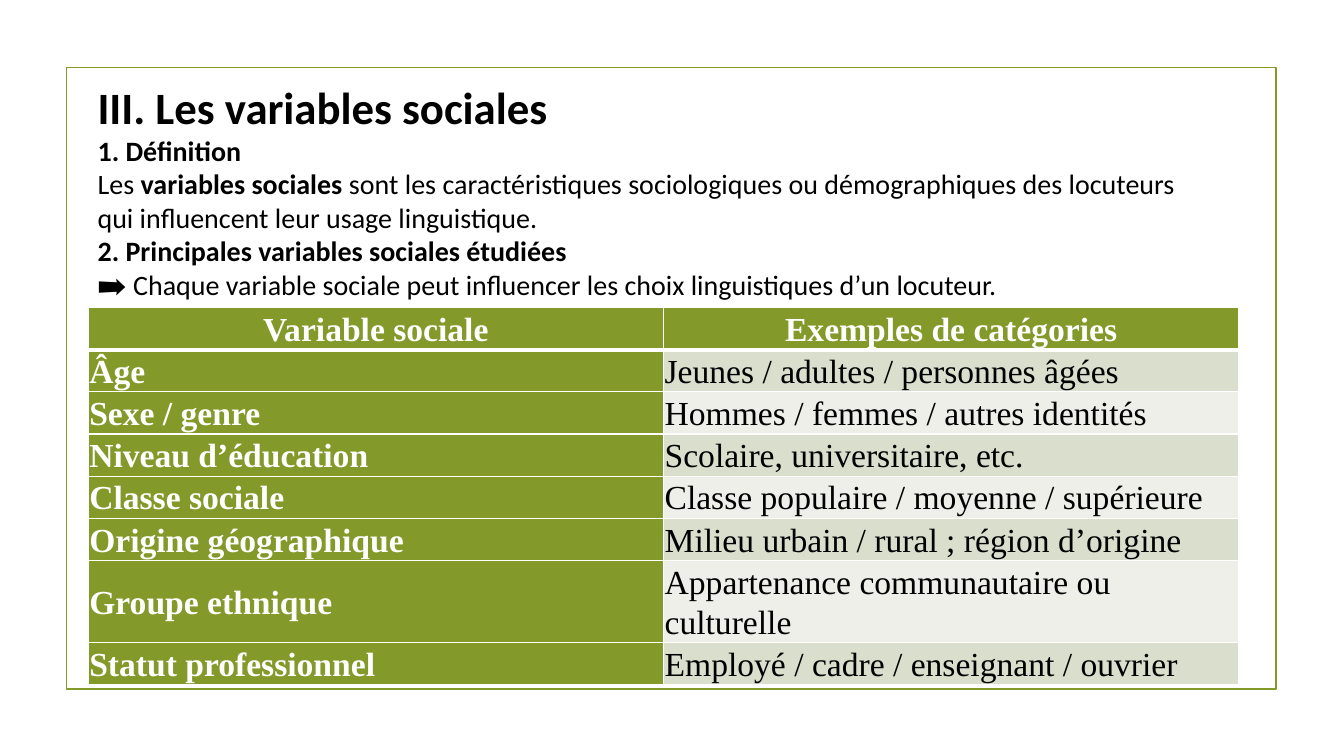
from lxml import etree
from pptx import Presentation
from pptx.dml.color import RGBColor
from pptx.enum.shapes import MSO_SHAPE
from pptx.enum.text import MSO_ANCHOR, PP_ALIGN
from pptx.oxml.ns import qn
from pptx.util import Cm, Pt

RECT = MSO_SHAPE.RECTANGLE
MIDDLE = MSO_ANCHOR.MIDDLE
LEFT, CENTER = PP_ALIGN.LEFT, PP_ALIGN.CENTER

GREEN, WHITE, BLACK = "83992A", "FFFFFF", "000000"
BANDS = ["EDEFE8", "D9DECD"]

# Each paragraph: size, then runs of (text, bold)
INTRO = [
    (32, [("III. Les variables sociales", True)]),
    (20, [("1. Définition", True)]),
    (20, [("Les ", False), ("variables sociales", True),
          (" sont les caractéristiques sociologiques ou démographiques des "
           "locuteurs qui influencent leur usage linguistique.", False)]),
    (20, [("2. Principales variables sociales étudiées", True)]),
    (20, [("➡️ Chaque variable sociale peut influencer les choix "
           "linguistiques d’un locuteur.", False)]),
]
ROWS = [
    ("Variable sociale", "Exemples de catégories"),
    ("Âge", "Jeunes / adultes / personnes âgées"),
    ("Sexe / genre", "Hommes / femmes / autres identités"),
    ("Niveau d’éducation", "Scolaire, universitaire, etc."),
    ("Classe sociale", "Classe populaire / moyenne / supérieure"),
    ("Origine géographique", "Milieu urbain / rural ; région d’origine"),
    ("Groupe ethnique", "Appartenance communautaire ou culturelle"),
    ("Statut professionnel", "Employé / cadre / enseignant / ouvrier"),
]
TALL = 6
LINE_H, TALL_H = 1.05, 2.07
COL_W = 14.5


def color(code):
    return RGBColor.from_string(code)


def style(font, name, size, code):
    font.name, font.size = name, Pt(size)
    font.color.rgb = color(code)


def border(cell, widths):
    """Draw white edges; widths maps L, R, T, B to points."""
    props = cell._tc.get_or_add_tcPr()
    for side, width in widths.items():
        line = etree.SubElement(props, qn(f"a:ln{side}"), w=str(Pt(width)))
        fill = etree.SubElement(line, qn("a:solidFill"))
        etree.SubElement(fill, qn("a:srgbClr"), val=WHITE)


def add_frame(slide):
    frame = slide.shapes.add_shape(RECT, Cm(1.68), Cm(1.7), Cm(30.48), Cm(15.67))
    frame.shadow.inherit = False
    frame.fill.background()
    frame.line.color.rgb = color(GREEN)
    frame.line.width = Pt(1.25)


def add_intro(slide):
    box = slide.shapes.add_textbox(Cm(2.21), Cm(1.85), Cm(28.4), Cm(5.89))
    text = box.text_frame
    text.word_wrap = True
    text.vertical_anchor = MIDDLE
    for i, (size, runs) in enumerate(INTRO):
        para = text.add_paragraph() if i else text.paragraphs[0]
        style(para.font, "Calibri", size, BLACK)
        for words, bold in runs:
            run = para.add_run()
            run.text, run.font.bold = words, bold


def fill_cell(cell, words, r, c):
    head, label = r == 0, r == 0 or c == 0
    cell.margin_left = cell.margin_right = Cm(0.03)
    cell.margin_top = cell.margin_bottom = Cm(0.03)
    cell.vertical_anchor = MIDDLE
    border(cell, {"L": 1, "R": 1, "T": 3 if r == 1 else 1, "B": 3 if head else 1})
    cell.fill.solid()
    cell.fill.fore_color.rgb = color(GREEN if label else BANDS[r % 2])
    para = cell.text_frame.paragraphs[0]
    para.text = words
    para.alignment = CENTER if head else LEFT
    para.line_spacing = 1.07
    style(para.font, "Times New Roman", 24, WHITE if label else BLACK)
    para.font.bold = label


def add_grid(slide):
    heights = [TALL_H if r == TALL else LINE_H for r in range(len(ROWS))]
    grid = slide.shapes.add_table(len(ROWS), 2, Cm(2.22), Cm(7.75),
                                  Cm(2 * COL_W), Cm(sum(heights))).table
    for col in grid.columns:
        col.width = Cm(COL_W)
    for r, pair in enumerate(ROWS):
        grid.rows[r].height = Cm(heights[r])
        for c, words in enumerate(pair):
            fill_cell(grid.cell(r, c), words, r, c)


def main():
    deck = Presentation()
    deck.slide_width, deck.slide_height = Cm(33.87), Cm(19.05)
    slide = deck.slides.add_slide(deck.slide_layouts[6])
    add_frame(slide)
    add_grid(slide)
    add_intro(slide)
    deck.save("out.pptx")


if __name__ == "__main__":
    main()
